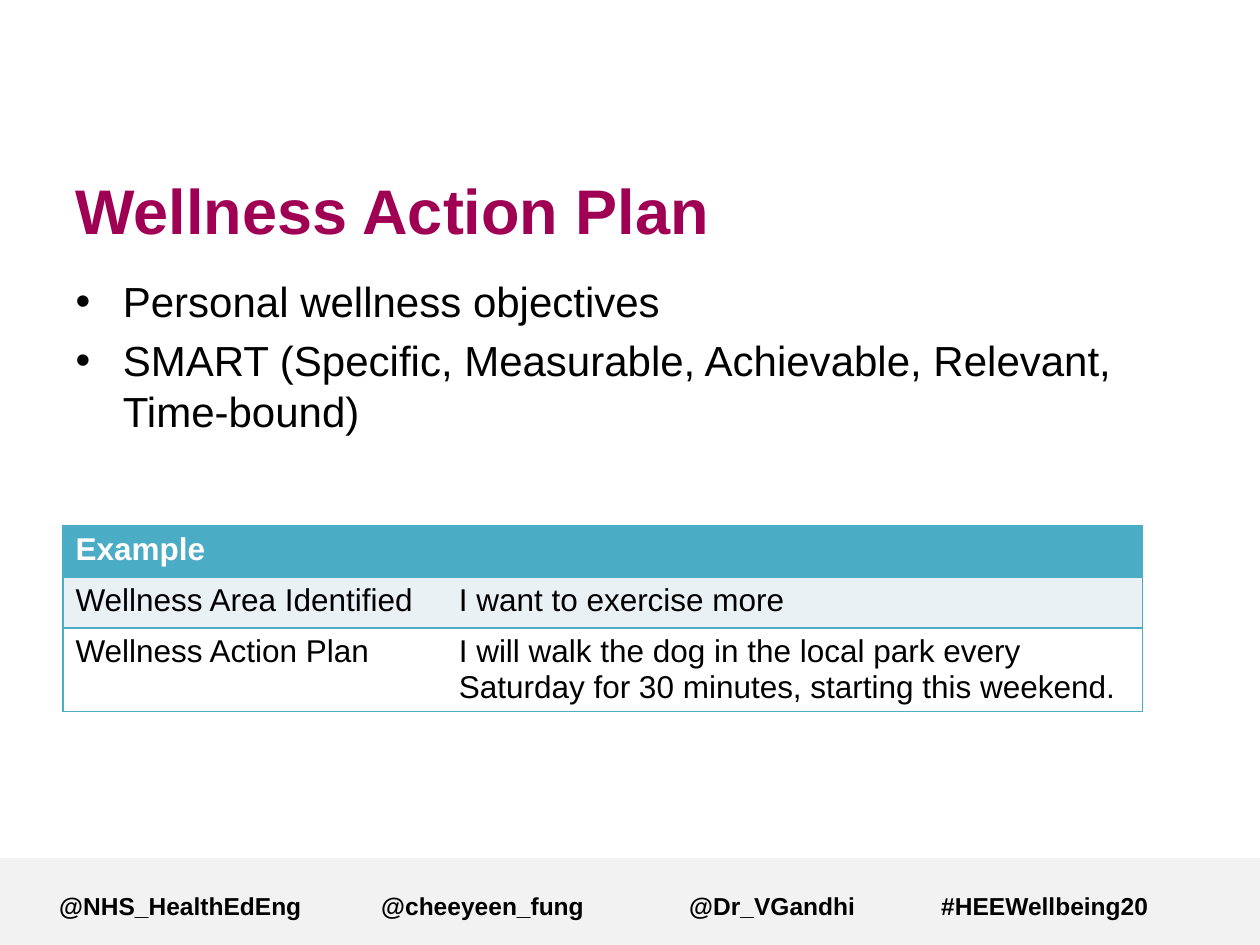
from dataclasses import dataclass

from pptx import Presentation
from pptx.dml.color import RGBColor
from pptx.enum.shapes import MSO_SHAPE
from pptx.enum.text import MSO_ANCHOR, MSO_AUTO_SIZE, PP_ALIGN
from pptx.oxml import parse_xml
from pptx.oxml.ns import nsdecls
from pptx.util import Pt


@dataclass(frozen=True)
class Theme:
    """Colours, type sizes and font of the slide."""
    font: str = "Arial"
    plum: str = "A00054"
    teal: str = "4BACC6"
    pale: str = "E9F1F5"
    grey: str = "F2F2F2"
    white: str = "FFFFFF"
    black: str = "000000"
    head: int = 36
    body: int = 24
    cell: int = 18
    foot: int = 14


THEME = Theme()
LEFT = 36
WIDTH = 617
POINTS = [
    "Personal wellness objectives",
    "SMART (Specific, Measurable, Achievable, Relevant, Time-bound)",
]
ROWS = [
    ("Example", ""),
    ("Wellness Area Identified", "I want to exercise more"),
    ("Wellness Action Plan",
     "I will walk the dog in the local park every Saturday for 30 minutes, "
     "starting this weekend."),
]
TAGS = ["@NHS_HealthEdEng", "@cheeyeen_fung", "@Dr_VGandhi", "#HEEWellbeing20"]
STOPS = [184, 360, 504]


def place(shape, left, top, width, height):
    """Move and size a shape, in points."""
    shape.left, shape.top = Pt(left), Pt(top)
    shape.width, shape.height = Pt(width), Pt(height)


def style(frame, size, color, bold=False):
    """Format every run of a text frame."""
    for para in frame.paragraphs:
        for run in para.runs:
            font = run.font
            font.name, font.size, font.bold = THEME.font, Pt(size), bold
            font.color.rgb = RGBColor.from_string(color)


def add_title(slide, text):
    """Fill the title placeholder."""
    shape = slide.shapes.title
    place(shape, LEFT, 93, 612, 53)
    frame = shape.text_frame
    frame.text = text
    frame.auto_size = MSO_AUTO_SIZE.NONE
    frame.vertical_anchor = MSO_ANCHOR.MIDDLE
    frame.paragraphs[0].alignment = PP_ALIGN.LEFT
    style(frame, THEME.head, THEME.plum, True)


def add_list(slide, items):
    """Fill the body placeholder with bullets."""
    shape = slide.placeholders[1]
    place(shape, LEFT, 154, WIDTH, 293)
    frame = shape.text_frame
    frame.text = "\n".join(items)
    frame.auto_size = MSO_AUTO_SIZE.NONE
    for index, para in enumerate(frame.paragraphs):
        para.space_before = Pt(5 if index else 0)
    style(frame, THEME.body, THEME.black)


def edge(cell, side, color=None):
    """Draw or clear one border of a cell."""
    paint = (f'<a:solidFill><a:srgbClr val="{color}"/></a:solidFill>'
             if color else "<a:noFill/>")
    props = cell._tc.get_or_add_tcPr()
    props.append(parse_xml(
        f'<a:ln{side} {nsdecls("a")} w="{Pt(1)}">{paint}</a:ln{side}>'))


def add_grid(slide, rows):
    """Add the example table with ruled rows."""
    widths, heights = (219, 398), (29.2, 29.2, 47.4)
    fills = (THEME.teal, THEME.pale, THEME.white)
    table = slide.shapes.add_table(
        len(rows), len(widths), Pt(LEFT), Pt(300.5), Pt(WIDTH),
        Pt(sum(heights))).table
    for col, width in zip(table.columns, widths):
        col.width = Pt(width)
    for row, height, fill, texts in zip(table.rows, heights, fills, rows):
        row.height = Pt(height)
        top = fill == THEME.teal
        for index, (cell, text) in enumerate(zip(row.cells, texts)):
            outer = "R" if index else "L"
            for side in "LRTB":
                edge(cell, side, THEME.teal if side in outer + "TB" else None)
            cell.fill.solid()
            cell.fill.fore_color.rgb = RGBColor.from_string(fill)
            cell.text_frame.text = text
            style(cell.text_frame, THEME.cell,
                  THEME.white if top else THEME.black, top)


def add_bar(slide):
    """Add the grey band along the bottom."""
    bar = slide.shapes.add_shape(
        MSO_SHAPE.RECTANGLE, Pt(0), Pt(490.3), Pt(720), Pt(49.7))
    bar.shadow.inherit = False
    bar.fill.solid()
    bar.fill.fore_color.rgb = RGBColor.from_string(THEME.grey)
    bar.line.fill.background()


def add_tags(slide, tags):
    """Add the footer handles, set on tab stops."""
    box = slide.shapes.add_textbox(Pt(26.8), Pt(505.5), Pt(681), Pt(34.5))
    frame = box.text_frame
    frame.word_wrap = True
    frame.text = "\t".join(tags)
    stops = "".join(f'<a:tab pos="{Pt(stop)}" algn="l"/>' for stop in STOPS)
    frame.paragraphs[0]._p.get_or_add_pPr().append(
        parse_xml(f'<a:tabLst {nsdecls("a")}>{stops}</a:tabLst>'))
    style(frame, THEME.foot, THEME.black, True)


def main():
    """Build and save the slide."""
    deck = Presentation()
    deck.slide_width, deck.slide_height = Pt(720), Pt(540)
    slide = deck.slides.add_slide(deck.slide_layouts[1])
    add_title(slide, "Wellness Action Plan")
    add_list(slide, POINTS)
    add_grid(slide, ROWS)
    add_bar(slide)
    add_tags(slide, TAGS)
    deck.save("out.pptx")


if __name__ == "__main__":
    main()
